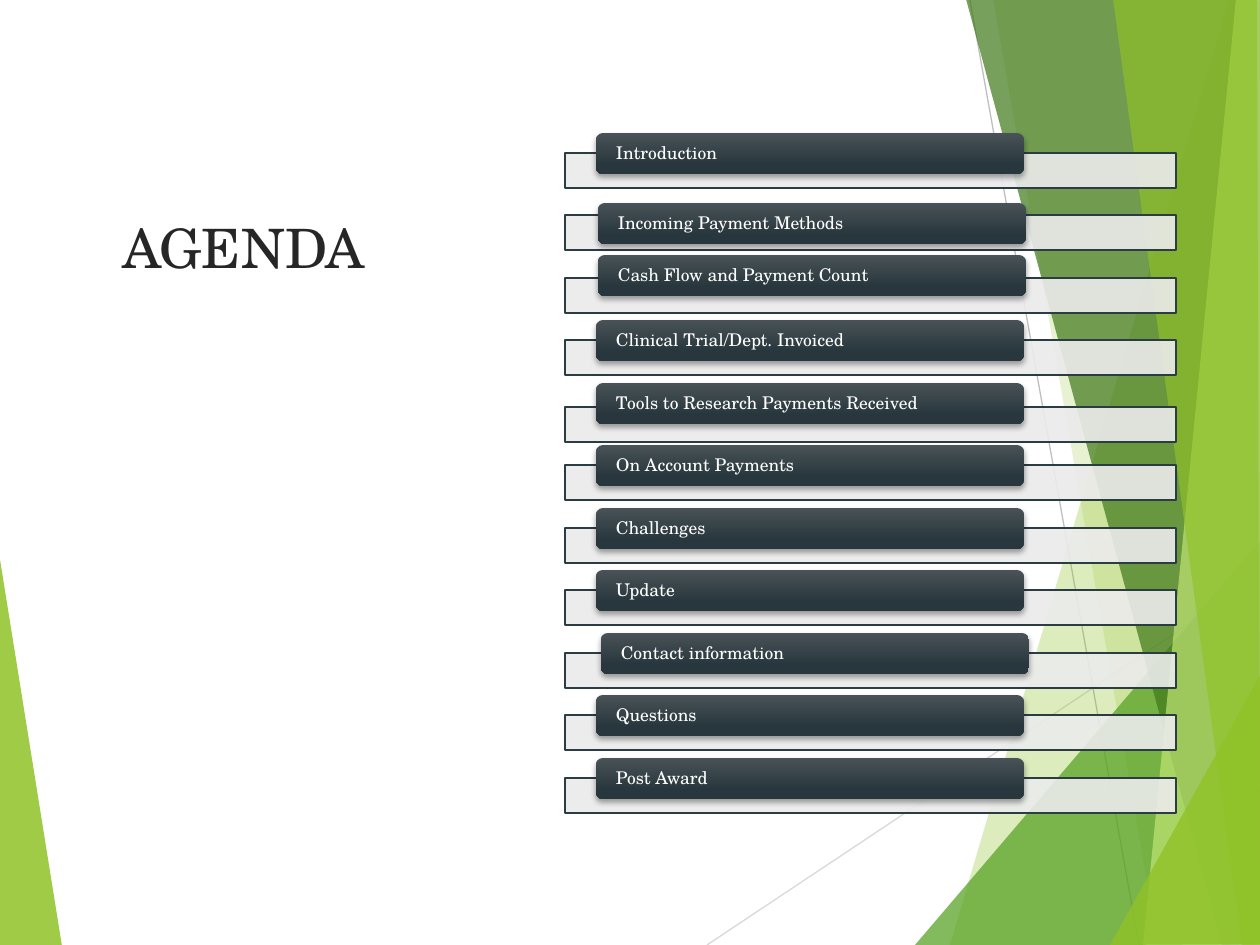
from dataclasses import dataclass

from lxml import etree
from pptx import Presentation
from pptx import util as u
from pptx.dml import color
from pptx.enum import shapes, text
from pptx.oxml import ns

EMU_PER_PX = 914400 / 126


@dataclass(frozen=True)
class Theme:
    font: str = "TeX Gyre Schola"
    title_size: int = 31
    item_size: int = 10
    title: str = "262626"
    item: str = "FFFFFF"
    rail: str = "EBEBEB"
    rail_line: str = "2C3C43"
    pill_top: str = "495257"
    pill_bottom: str = "28373D"
    shadow: str = "000000"
    lime: str = "90C226"
    pale_lime: str = "C0E474"
    green: str = "54A021"
    dark_green: str = "3F7819"
    light_line: str = "D9D9D9"
    mid_line: str = "BFBFBF"


THEME = Theme()


@dataclass(frozen=True)
class Facet:
    points: tuple[tuple[int, int], ...]
    fill: str
    opacity: int


@dataclass(frozen=True)
class Ray:
    start: tuple[int, int]
    end: tuple[int, int]
    line: str


@dataclass(frozen=True)
class AgendaItem:
    label: str
    pill_dx: int = 0
    pill_dy: int = 0
    rail_dy: int = 0


LEFT_FACET = Facet(((-1, 553), (62, 946), (-1, 945)), THEME.lime, 85)
RAYS = (
    Ray((707, 945), (1261, 576), THEME.light_line),
    Ray((970, 0), (1139, 945), THEME.mid_line),
)
RIGHT_FACETS = (
    Facet(((1229, 0), (950, 945), (1262, 946), (1261, 1)), THEME.lime, 30),
    Facet(((993, -1), (1158, 945), (1261, 945), (1261, -1)), THEME.lime, 20),
    Facet(((915, 945), (1260, 541), (1261, 945)), THEME.green, 72),
    Facet(((966, -1), (1222, 945), (1261, 944), (1261, -1)), THEME.dark_green, 70),
    Facet(((1236, -1), (1143, 945), (1261, 945), (1260, -1)), THEME.pale_lime, 70),
    Facet(((1113, -1), (1242, 945), (1260, 945), (1257, -1)), THEME.lime, 65),
    Facet(((1110, 945), (1261, 674), (1261, 944)), THEME.lime, 80),
)
AGENDA = (
    AgendaItem("Introduction"),
    AgendaItem("Incoming Payment Methods", pill_dx=2, pill_dy=8),
    AgendaItem("Cash Flow and Payment Count", pill_dx=2, pill_dy=-3),
    AgendaItem("Clinical Trial/Dept. Invoiced"),
    AgendaItem("Tools to Research Payments Received", rail_dy=4),
    AgendaItem("On Account Payments"),
    AgendaItem("Challenges"),
    AgendaItem("Update"),
    AgendaItem("Contact information", pill_dx=5),
    AgendaItem("Questions"),
    AgendaItem("Post Award"),
)

RAIL_LEFT, RAIL_WIDTH, RAIL_HEIGHT = 565, 611, 35
PILL_LEFT, PILL_WIDTH, PILL_HEIGHT, PILL_RISE = 596, 428, 41, 20
FIRST_RAIL_TOP, LAST_RAIL_TOP = 153, 778


def px(value: int) -> u.Emu:
    return u.Emu(round(value * EMU_PER_PX))


def rgb(value: str) -> color.RGBColor:
    return color.RGBColor.from_string(value)


def fill_solid(shape, fill: str, opacity: int) -> None:
    shape.fill.solid()
    shape.fill.fore_color.rgb = rgb(fill)
    colour = shape._element.spPr.find(".//" + ns.qn("a:srgbClr"))
    etree.SubElement(colour, ns.qn("a:alpha"), val=str(opacity * 1000))


def add_soft_shadow(shape) -> None:
    shape.shadow.inherit = False
    effects = shape._element.spPr.find(ns.qn("a:effectLst"))
    shadow = etree.SubElement(
        effects, ns.qn("a:outerShdw"), blurRad=str(u.Pt(3)), dist=str(u.Pt(2)),
        dir="5400000", rotWithShape="0")
    colour = etree.SubElement(shadow, ns.qn("a:srgbClr"), val=THEME.shadow)
    etree.SubElement(colour, ns.qn("a:alpha"), val="35000")


def style_runs(paragraph, size: int, colour: str) -> None:
    for run in paragraph.runs:
        run.font.name = THEME.font
        run.font.size = u.Pt(size)
        run.font.color.rgb = rgb(colour)


def draw_facet(slide, facet: Facet) -> None:
    first, *others = facet.points
    builder = slide.shapes.build_freeform(*first, scale=EMU_PER_PX)
    builder.add_line_segments(others, close=True)
    shape = builder.convert_to_shape()
    shape.shadow.inherit = False
    shape.line.fill.background()
    fill_solid(shape, facet.fill, facet.opacity)


def draw_ray(slide, ray: Ray) -> None:
    connector = slide.shapes.add_connector(
        shapes.MSO_CONNECTOR.STRAIGHT, *map(px, ray.start + ray.end))
    connector.line.color.rgb = rgb(ray.line)
    connector.line.width = u.Pt(0.75)
    etree.SubElement(connector._element.spPr, ns.qn("a:effectLst"))


def draw_title(slide) -> None:
    title = slide.shapes.title
    title.left, title.top, title.width, title.height = map(px, (110, 145, 290, 660))
    frame = title.text_frame
    frame.text = "AGENDA"
    frame.auto_size = text.MSO_AUTO_SIZE.NONE
    frame.vertical_anchor = text.MSO_ANCHOR.TOP
    frame.margin_top = px(69)
    paragraph = frame.paragraphs[0]
    paragraph.alignment = text.PP_ALIGN.LEFT
    style_runs(paragraph, THEME.title_size, THEME.title)


def draw_rail(slide, top: int) -> None:
    rail = slide.shapes.add_shape(
        shapes.MSO_SHAPE.RECTANGLE,
        *map(px, (RAIL_LEFT, top, RAIL_WIDTH, RAIL_HEIGHT)))
    rail.shadow.inherit = False
    fill_solid(rail, THEME.rail, 90)
    rail.line.color.rgb = rgb(THEME.rail_line)
    rail.line.width = u.Pt(1)


def draw_pill(slide, label: str, left: int, top: int) -> None:
    pill = slide.shapes.add_shape(
        shapes.MSO_SHAPE.ROUNDED_RECTANGLE,
        *map(px, (left, top, PILL_WIDTH, PILL_HEIGHT)))
    pill.fill.gradient()
    pill.fill.gradient_angle = 270
    stops = ((0, THEME.pill_top), (0.78, THEME.pill_bottom))
    for stop, (position, colour) in zip(pill.fill.gradient_stops, stops):
        stop.position = position
        stop.color.rgb = rgb(colour)
    pill.line.fill.background()
    add_soft_shadow(pill)

    frame = pill.text_frame
    frame.text = label
    frame.word_wrap = True
    frame.vertical_anchor = text.MSO_ANCHOR.MIDDLE
    frame.margin_left = frame.margin_right = px(18)
    frame.margin_top = frame.margin_bottom = 0
    paragraph = frame.paragraphs[0]
    paragraph.alignment = text.PP_ALIGN.LEFT
    paragraph.line_spacing = 0.9
    style_runs(paragraph, THEME.item_size, THEME.item)


def draw_agenda(slide) -> None:
    span = LAST_RAIL_TOP - FIRST_RAIL_TOP
    for index, item in enumerate(AGENDA):
        top = FIRST_RAIL_TOP + span * index // (len(AGENDA) - 1)
        draw_rail(slide, top + item.rail_dy)
        draw_pill(slide, item.label, PILL_LEFT + item.pill_dx,
                  top - PILL_RISE + item.pill_dy)


def main() -> None:
    presentation = Presentation()
    presentation.slide_width, presentation.slide_height = px(1260), px(945)
    slide = presentation.slides.add_slide(presentation.slide_layouts[5])
    draw_facet(slide, LEFT_FACET)
    for ray in RAYS:
        draw_ray(slide, ray)
    for facet in RIGHT_FACETS:
        draw_facet(slide, facet)
    draw_title(slide)
    draw_agenda(slide)
    presentation.save("out.pptx")


if __name__ == "__main__":
    main()
